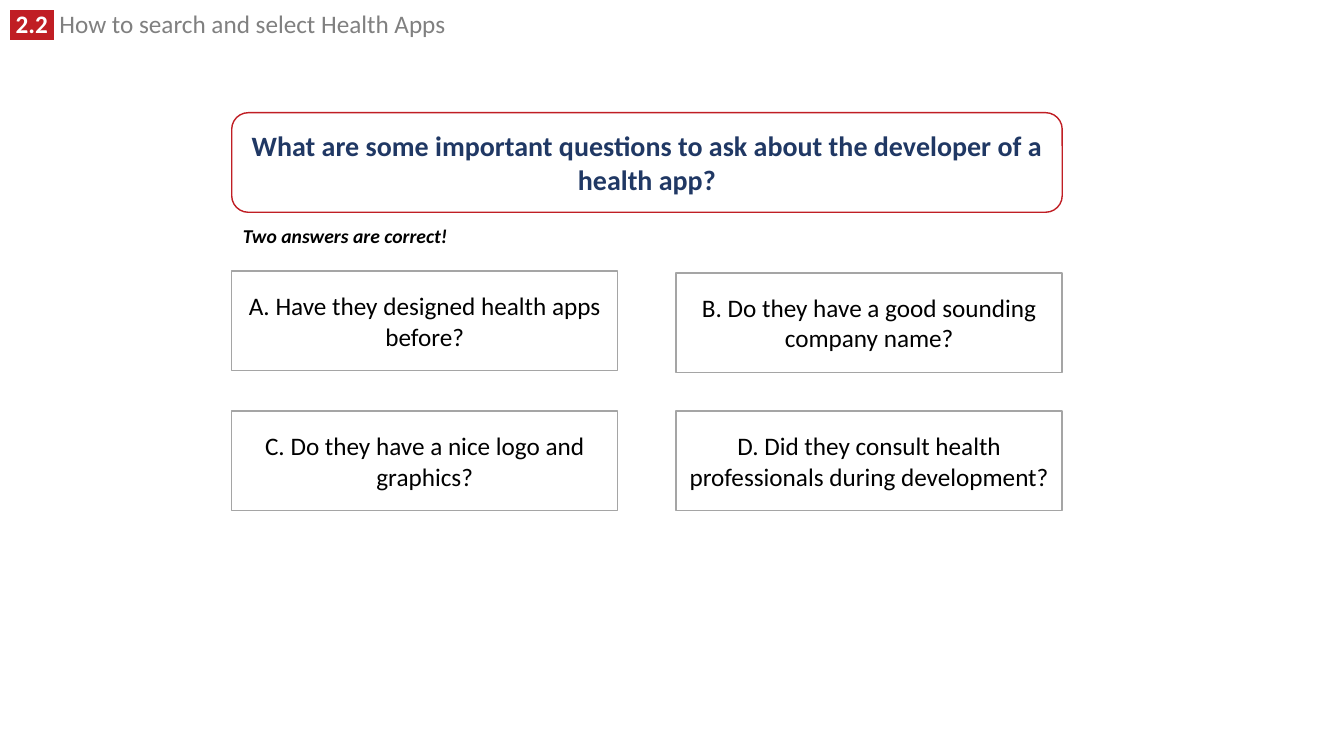
from dataclasses import dataclass

from lxml import etree
from pptx import Presentation
from pptx.dml.color import RGBColor
from pptx.enum.shapes import MSO_SHAPE
from pptx.enum.text import MSO_ANCHOR, MSO_AUTO_SIZE, PP_ALIGN
from pptx.oxml.ns import qn
from pptx.util import Cm, Pt

RECTANGLE = MSO_SHAPE.RECTANGLE
ROUNDED = MSO_SHAPE.ROUNDED_RECTANGLE
TOP, MIDDLE = MSO_ANCHOR.TOP, MSO_ANCHOR.MIDDLE
LEFT, CENTER = PP_ALIGN.LEFT, PP_ALIGN.CENTER
FIT_SHAPE = MSO_AUTO_SIZE.SHAPE_TO_FIT_TEXT
TITLE_ONLY = 5


@dataclass(frozen=True)
class Theme:
    font: str = "Calibri"
    red: str = "C01E24"
    navy: str = "203864"
    gray: str = "808080"
    border: str = "A5A5A5"
    white: str = "FFFFFF"
    black: str = "000000"
    question_size: int = 20
    text_size: int = 18
    hint_size: int = 14


THEME = Theme()

# Layout in centimetres: cards align with both edges of the question box
BOX_LEFT, BOX_WIDTH, BOX_HEIGHT = 5.84, 20.93, 2.51
CARD_WIDTH = 9.73
CARD_LEFTS = (BOX_LEFT, BOX_LEFT + BOX_WIDTH - CARD_WIDTH)

# Answer, column, top
ANSWERS = (
    ("A. Have they designed health apps before?", 0, 6.83),
    ("B. Do they have a good sounding company name?", 1, 6.88),
    ("C. Do they have a nice logo and graphics?", 0, 10.36),
    ("D. Did they consult health professionals during development?", 1, 10.36),
)


def set_attributes(target, values):
    for name, value in values.items():
        setattr(target, name, value)


def add_run(paragraph, text, size, color, bold=False, italic=False):
    run = paragraph.add_run()
    run.text = text
    set_attributes(run.font, {
        "name": THEME.font, "size": Pt(size), "bold": bold, "italic": italic,
    })
    run.font.color.rgb = RGBColor.from_string(color)
    return run


def highlight(run, color):
    """Put a marker colour behind a run, directly after its fill."""
    marker = etree.Element(qn("a:highlight"))
    etree.SubElement(marker, qn("a:srgbClr"), val=color)
    run.font._element.find(qn("a:solidFill")).addnext(marker)


def add_section_title(slide, number, text):
    title = slide.shapes.title
    set_attributes(title, {
        "left": Cm(0), "top": Cm(0.23), "width": Cm(24.18), "height": Cm(0.89),
    })
    set_attributes(title.text_frame, {
        "vertical_anchor": TOP, "word_wrap": True, "auto_size": FIT_SHAPE,
    })
    paragraph = title.text_frame.paragraphs[0]
    set_attributes(paragraph, {"alignment": LEFT, "line_spacing": 0.8})
    badge = add_run(paragraph, f" {number} ", THEME.text_size, THEME.white, bold=True)
    highlight(badge, THEME.red)
    add_run(paragraph, f" {text}", THEME.text_size, THEME.gray)


def add_box(slide, kind, left, top, width, border, text, **text_format):
    shape = slide.shapes.add_shape(kind, Cm(left), Cm(top), Cm(width), Cm(BOX_HEIGHT))
    shape.shadow.inherit = False
    shape.fill.solid()
    shape.fill.fore_color.rgb = RGBColor.from_string(THEME.white)
    shape.line.color.rgb = RGBColor.from_string(border)
    shape.line.width = Pt(1)
    set_attributes(shape.text_frame, {"vertical_anchor": MIDDLE, "word_wrap": True})
    paragraph = shape.text_frame.paragraphs[0]
    paragraph.alignment = CENTER
    add_run(paragraph, text, **text_format)


def add_hint(slide, text):
    box = slide.shapes.add_textbox(Cm(5.87), Cm(5.51), Cm(5.69), Cm(0.86))
    set_attributes(box.text_frame, {"word_wrap": False, "auto_size": FIT_SHAPE})
    add_run(box.text_frame.paragraphs[0], text, THEME.hint_size, THEME.black,
            bold=True, italic=True)


def main():
    presentation = Presentation()
    presentation.slide_width, presentation.slide_height = Cm(33.87), Cm(19.05)
    slide = presentation.slides.add_slide(presentation.slide_layouts[TITLE_ONLY])

    # Section heading
    add_section_title(slide, "2.2", "How to search and select Health Apps")

    # Question and hint
    add_box(slide, ROUNDED, BOX_LEFT, 2.84, BOX_WIDTH, THEME.red,
            "What are some important questions to ask about the developer of a health app?",
            size=THEME.question_size, color=THEME.navy, bold=True)
    add_hint(slide, "Two answers are correct!")

    # Answer cards
    for text, column, top in ANSWERS:
        add_box(slide, RECTANGLE, CARD_LEFTS[column], top, CARD_WIDTH, THEME.border,
                text, size=THEME.text_size, color=THEME.black)

    presentation.save("out.pptx")


if __name__ == "__main__":
    main()
